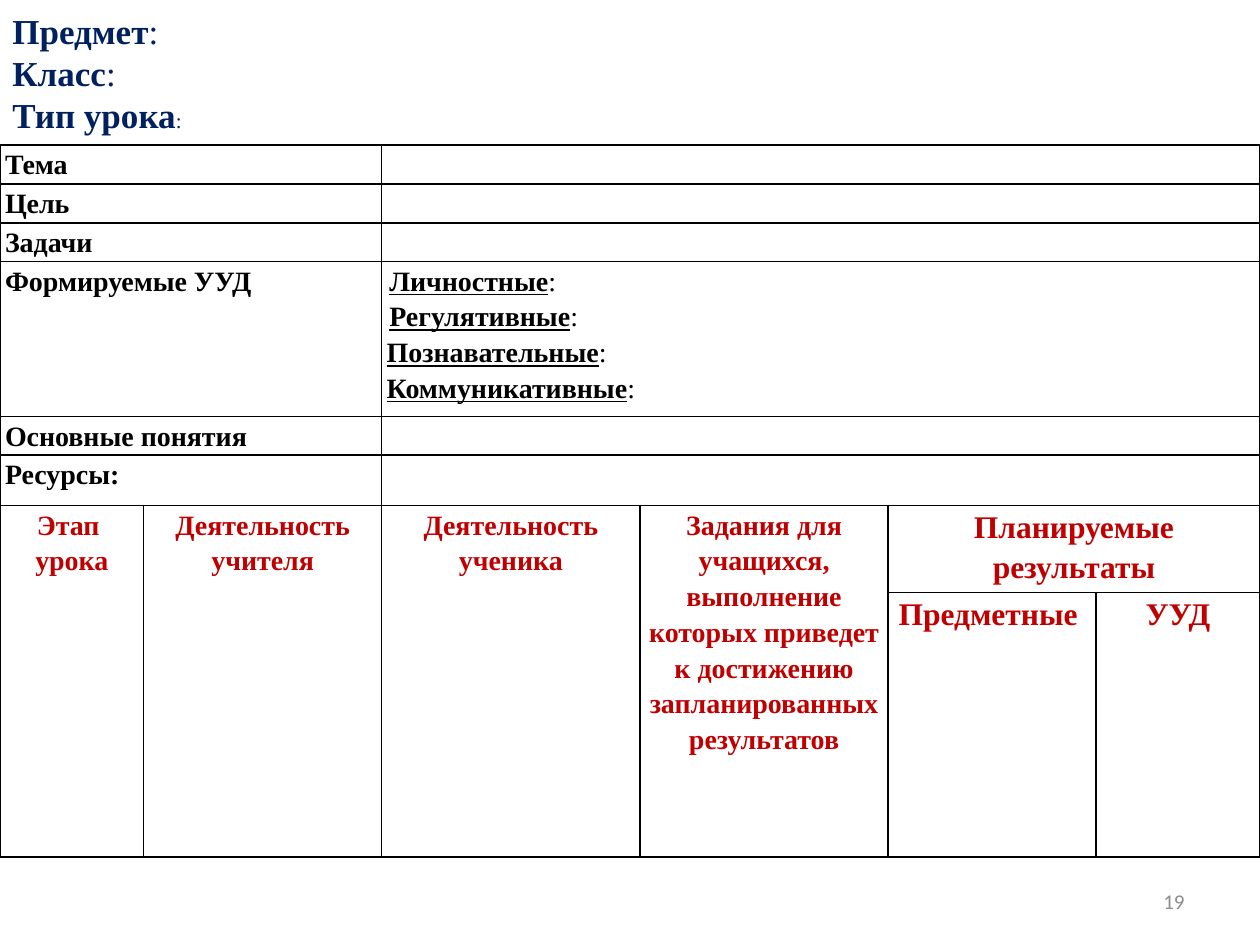
from pptx import Presentation
from pptx.dml.color import RGBColor
from pptx.enum.text import MSO_ANCHOR, PP_ALIGN
from pptx.oxml import parse_xml
from pptx.oxml.ns import nsdecls
from pptx.util import Inches, Pt

LEFT, CENTER, RIGHT = PP_ALIGN.LEFT, PP_ALIGN.CENTER, PP_ALIGN.RIGHT
TOP, MIDDLE = MSO_ANCHOR.TOP, MSO_ANCHOR.MIDDLE
WIDTH, HEIGHT = Inches(10), Inches(7.5)

BLACK, NAVY, RED, GREY = "000000", "002060", "C00000", "8C8C8C"
SERIF, SANS = "Times New Roman", "Calibri"

COLUMN_WIDTHS = [1.14, 1.89, 2.05, 1.97, 1.65, 1.3]
ROW_HEIGHTS = [0.31, 0.31, 0.3, 1.23, 0.3, 0.4, 0.69, 2.1]
LABELS = ["Тема", "Цель", "Задачи", "Формируемые УУД", "Основные понятия", "Ресурсы:"]
SKILLS_ROW = 3
SKILLS = ["Личностные", "Регулятивные", "Познавательные", "Коммуникативные"]
STAGE_ROW = len(LABELS)
STAGE_HEADINGS = [
    ["Этап ", "урока"],
    ["Деятельность учителя"],
    ["Деятельность ученика"],
    ["Задания для учащихся, выполнение которых приведет "
     "к достижению запланированных результатов"],
]
RESULTS_COLUMN = len(STAGE_HEADINGS)
RESULTS = ["Предметные ", "УУД"]


def colour(hex_string):
    return RGBColor.from_string(hex_string)


class LessonSlide:
    def __init__(self, presentation):
        self.slide = presentation.slides.add_slide(presentation.slide_layouts[6])

    def style(self, run, size, hex_string, bold=False, font=SERIF, underline=False):
        run.font.size, run.font.name = Pt(size), font
        run.font.bold, run.font.underline = bold, underline
        run.font.color.rgb = colour(hex_string)

    def text_box(self, x, y, width, height, lines, anchor):
        """Add a box placed by shares of the slide; return its paragraphs."""
        box = self.slide.shapes.add_textbox(
            round(WIDTH * x), round(HEIGHT * y), round(WIDTH * width), round(HEIGHT * height))
        frame = box.text_frame
        frame.word_wrap, frame.vertical_anchor = True, anchor
        frame.text = "\n".join(lines)
        return frame.paragraphs

    def table(self, y, widths, heights):
        """Add a plain bordered table across the slide."""
        table = self.slide.shapes.add_table(
            len(heights), len(widths), 0, round(HEIGHT * y),
            WIDTH, Inches(sum(heights))).table
        table.first_row = table.horz_banding = False
        for column, width in zip(table.columns, widths):
            column.width = Inches(width)
        for row, height in zip(table.rows, heights):
            row.height = Inches(height)
        for cell in table.iter_cells():
            cell.margin_left = cell.margin_right = Inches(0.04)
            cell.margin_top = cell.margin_bottom = 0
            cell.fill.background()
            self.borders(cell)
        return table

    def borders(self, cell):
        properties = cell._tc.get_or_add_tcPr()
        for position, side in enumerate(("lnL", "lnR", "lnT", "lnB")):
            properties.insert(position, parse_xml(
                f'<a:{side} {nsdecls("a")} w="12700"><a:solidFill>'
                f'<a:srgbClr val="{BLACK}"/></a:solidFill></a:{side}>'))

    def cell_text(self, cell, lines, size=16, hex_string=BLACK, align=LEFT):
        cell.text_frame.text = "\n".join(lines)
        for paragraph in cell.text_frame.paragraphs:
            paragraph.alignment, paragraph.line_spacing = align, 1.15
            self.style(paragraph.runs[0], size, hex_string, bold=True)

    def add_colon(self, paragraph, size, hex_string):
        colon = paragraph.add_run()
        colon.text = ":"
        self.style(colon, size, hex_string)


def fill_plan(page, table):
    for row, label in enumerate(LABELS):
        table.cell(row, 0).merge(table.cell(row, 1))
        table.cell(row, 2).merge(table.cell(row, 5))
        page.cell_text(table.cell(row, 0), [label])

    skills_cell = table.cell(SKILLS_ROW, 2)
    page.cell_text(skills_cell, SKILLS)
    for index, paragraph in enumerate(skills_cell.text_frame.paragraphs):
        paragraph.runs[0].font.underline = True
        page.add_colon(paragraph, 16, BLACK)
        if index < 2:
            paragraph._p.get_or_add_pPr().set("marL", str(Inches(0.02)))


def fill_stages(page, table):
    for column, heading in enumerate(STAGE_HEADINGS):
        cell = table.cell(STAGE_ROW, column)
        cell.merge(table.cell(STAGE_ROW + 1, column))
        page.cell_text(cell, heading, 16, RED, CENTER)

    results = table.cell(STAGE_ROW, RESULTS_COLUMN)
    results.merge(table.cell(STAGE_ROW, RESULTS_COLUMN + 1))
    page.cell_text(results, ["Планируемые результаты"], 18, RED, CENTER)
    for column, result in enumerate(RESULTS, RESULTS_COLUMN):
        page.cell_text(table.cell(STAGE_ROW + 1, column), [result], 18, RED, CENTER)


def main():
    presentation = Presentation()
    presentation.slide_width, presentation.slide_height = WIDTH, HEIGHT
    page = LessonSlide(presentation)

    lesson_table = page.table(1.15 / 7.5, COLUMN_WIDTHS, ROW_HEIGHTS)
    fill_plan(page, lesson_table)
    fill_stages(page, lesson_table)

    lesson_facts = page.text_box(0, 0.004, 1, 0.16, ["Предмет", "Класс", "Тип урока"], TOP)
    for fact, colon_size in zip(lesson_facts, (20, 20, 12)):
        page.style(fact.runs[0], 20, NAVY, bold=True)
        page.add_colon(fact, colon_size, NAVY)

    page_number = page.text_box(0.717, 0.927, 0.233, 0.053, ["19"], MIDDLE)[0]
    page_number.alignment = RIGHT
    page.style(page_number.runs[0], 12, GREY, font=SANS)

    presentation.save("out.pptx")


if __name__ == "__main__":
    main()
